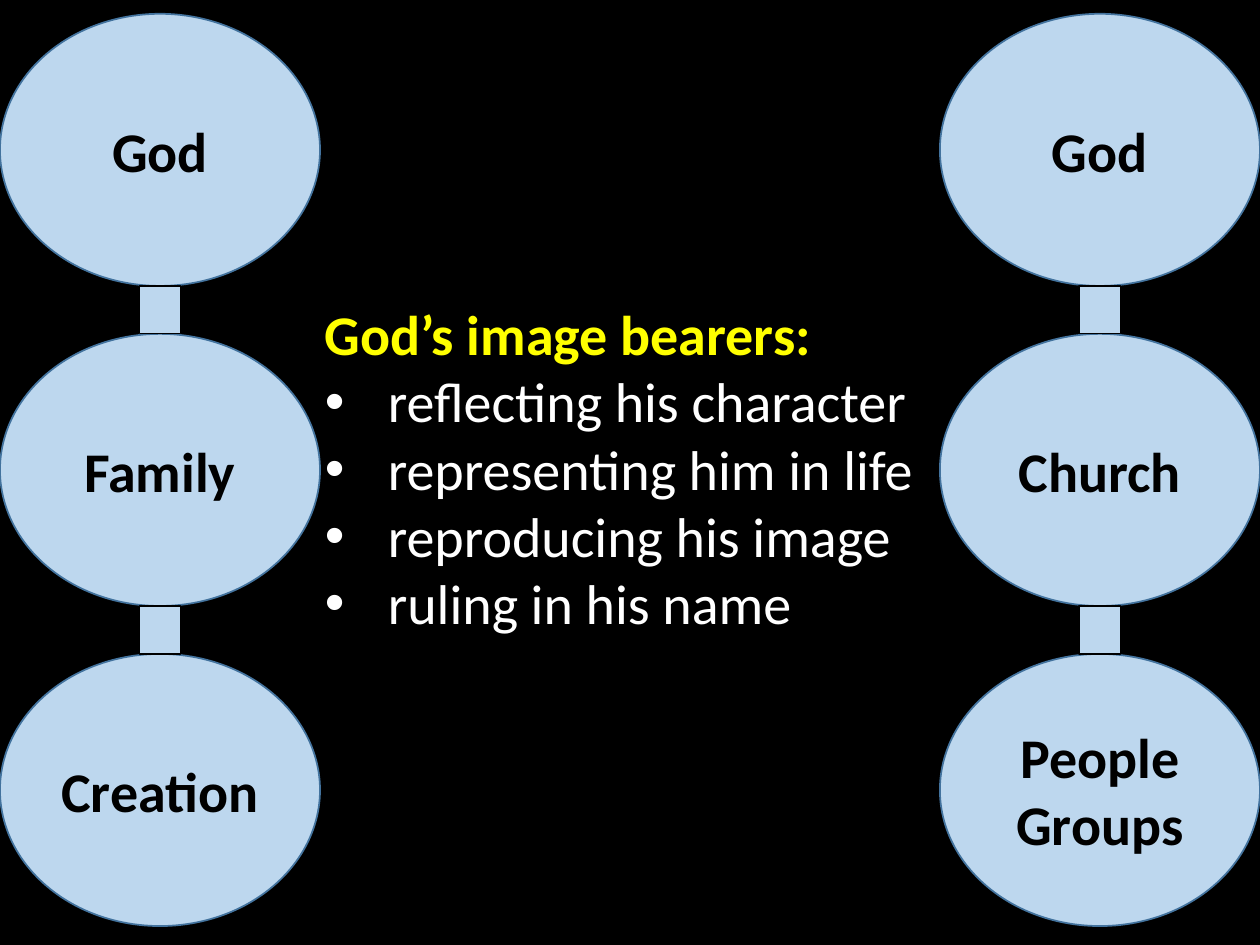
from lxml import etree
from pptx import Presentation
from pptx.dml.color import RGBColor
from pptx.enum.shapes import MSO_SHAPE
from pptx.enum.text import MSO_ANCHOR, MSO_AUTO_SIZE, PP_ALIGN
from pptx.oxml.ns import qn
from pptx.util import Inches, Pt

ELLIPSE = MSO_SHAPE.OVAL
RECTANGLE = MSO_SHAPE.RECTANGLE
MIDDLE = MSO_ANCHOR.MIDDLE
CENTER = PP_ALIGN.CENTER
GROW = MSO_AUTO_SIZE.SHAPE_TO_FIT_TEXT

COLORS = {
    "background": "000000",
    "circle": "BDD7EE",
    "outline": "43739E",
    "label": "000000",
    "heading": "FFFF00",
    "point": "FFFFFF",
}
CIRCLE_WIDTH, CIRCLE_HEIGHT = 2.54, 2.16
LINK_WIDTH, LINK_HEIGHT = 0.33, 0.38
CHAIN_TOP = 0.11
CHAINS = [
    (0, ["God", "Family", "Creation"]),
    (7.46, ["God", "Church", "People Groups"]),
]
HEADING = "God’s image bearers:"
POINTS = [
    "reflecting his character",
    "representing him in life",
    "reproducing his image",
    "ruling in his name",
]


def rgb(name):
    return RGBColor.from_string(COLORS[name])


class SlideBuilder:
    font_name = "Calibri"
    font_size = Pt(32)

    def __init__(self, slide):
        self.slide = slide
        background = slide.background.fill
        background.solid()
        background.fore_color.rgb = rgb("background")

    def run(self, paragraph, text, color, bold=False):
        run = paragraph.add_run()
        run.text = text
        run.font.name = self.font_name
        run.font.size = self.font_size
        run.font.bold = bold
        run.font.color.rgb = rgb(color)

    def shape(self, group, kind, left, top, width, height, outline, weight):
        shape = group.shapes.add_shape(
            kind, Inches(left), Inches(top), Inches(width), Inches(height))
        shape.shadow.inherit = False
        shape.fill.solid()
        shape.fill.fore_color.rgb = rgb("circle")
        shape.line.color.rgb = rgb(outline)
        shape.line.width = Pt(weight)
        return shape

    def circle(self, group, left, top, label):
        circle = self.shape(group, ELLIPSE, left, top, CIRCLE_WIDTH,
                            CIRCLE_HEIGHT, "outline", 1)
        frame = circle.text_frame
        frame.word_wrap = True
        frame.vertical_anchor = MIDDLE
        frame.paragraphs[0].alignment = CENTER
        self.run(frame.paragraphs[0], label, "label", bold=True)

    def link(self, group, left, top):
        self.shape(group, RECTANGLE, left, top, LINK_WIDTH, LINK_HEIGHT,
                   "background", 0.75)

    def chain(self, left, labels):
        group = self.slide.shapes.add_group_shape()
        tops = [CHAIN_TOP + i * (CIRCLE_HEIGHT + LINK_HEIGHT)
                for i in range(len(labels))]
        for top, label in zip(tops, labels):
            self.circle(group, left, top, label)
        for top in tops[:-1]:
            self.link(group, left + (CIRCLE_WIDTH - LINK_WIDTH) / 2,
                      top + CIRCLE_HEIGHT)

    def bullet(self, paragraph):
        properties = paragraph._p.get_or_add_pPr()
        properties.set("marL", str(Inches(0.5)))
        properties.set("indent", str(Inches(-0.5)))
        etree.SubElement(properties, qn("a:buFont")).set("typeface", "Arial")
        etree.SubElement(properties, qn("a:buChar")).set("char", "•")

    def bullet_list(self, left, top, width, height, heading, points):
        box = self.slide.shapes.add_textbox(
            Inches(left), Inches(top), Inches(width), Inches(height))
        frame = box.text_frame
        frame.word_wrap = True
        frame.auto_size = GROW
        self.run(frame.paragraphs[0], heading, "heading", bold=True)
        for point in points:
            paragraph = frame.add_paragraph()
            self.bullet(paragraph)
            self.run(paragraph, point, "point")


def main():
    presentation = Presentation()
    presentation.slide_width = Inches(10)
    presentation.slide_height = Inches(7.5)
    blank = presentation.slide_layouts[6]
    builder = SlideBuilder(presentation.slides.add_slide(blank))
    for left, labels in CHAINS:
        builder.chain(left, labels)
    builder.bullet_list(2.48, 2.33, 5.04, 2.79, HEADING, POINTS)
    presentation.save("out.pptx")


if __name__ == "__main__":
    main()
